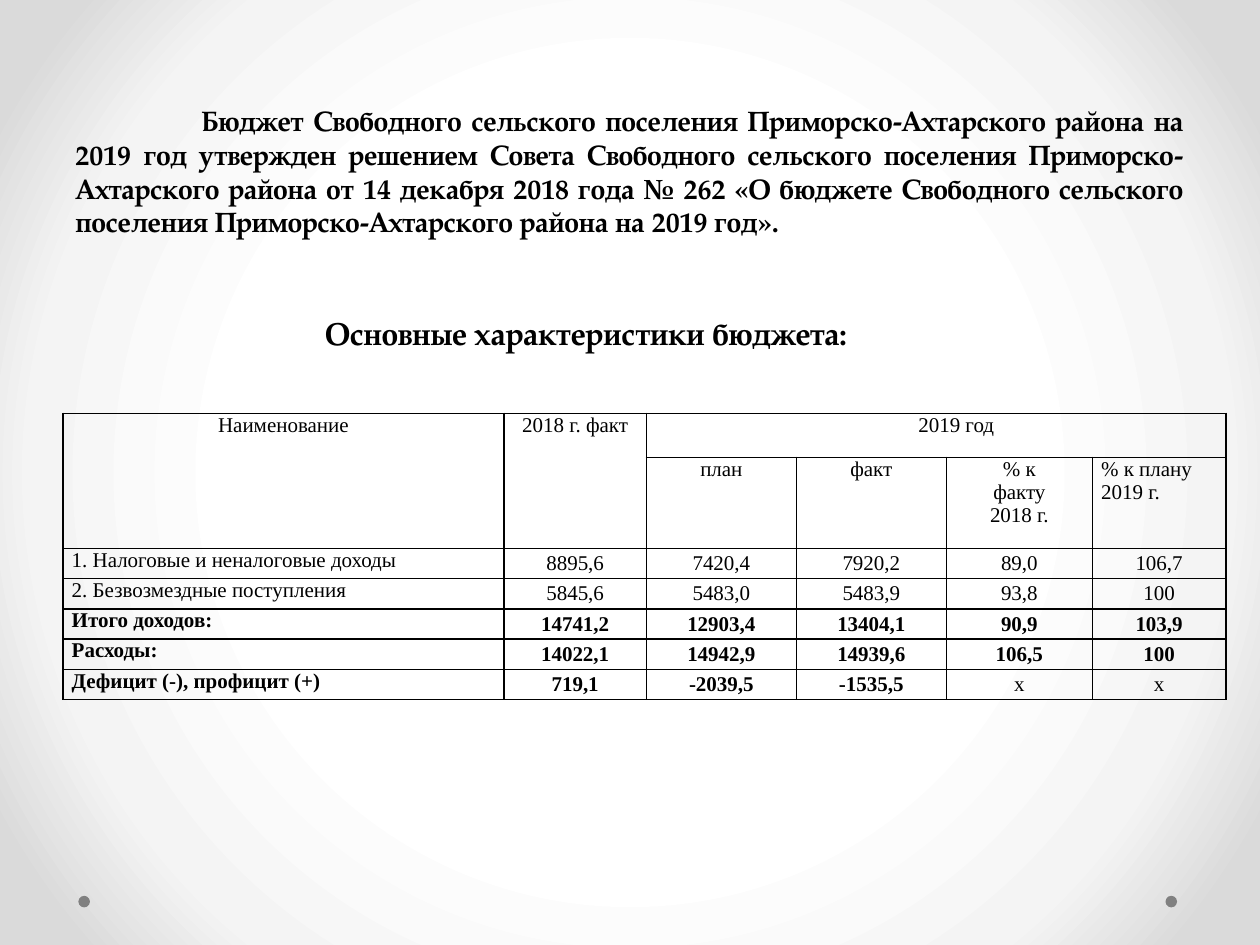
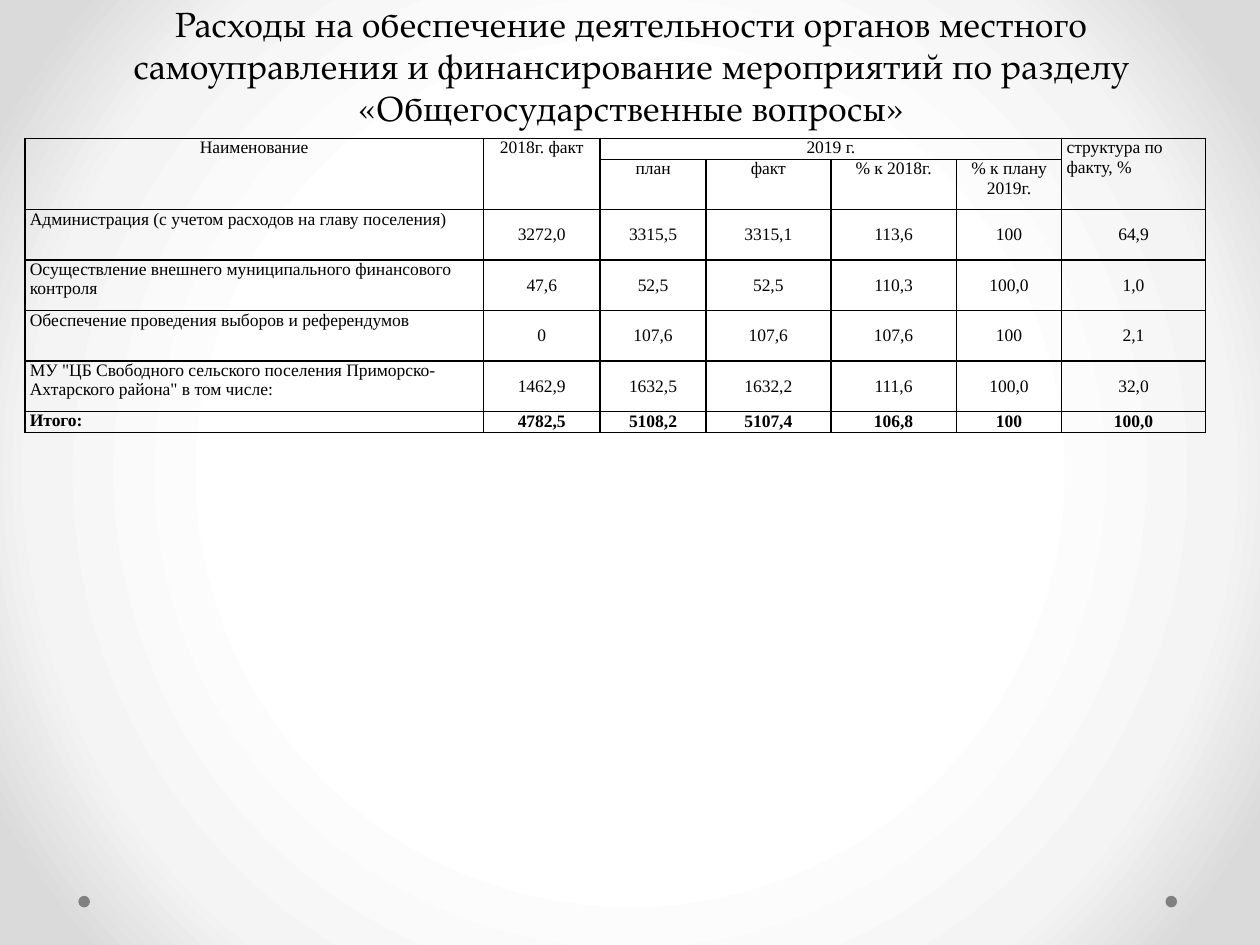
"""Builds two budget slides with shared background, dots, headings and table style."""
import dataclasses

import pptx
import pptx.dml.color
import pptx.enum.shapes
import pptx.enum.text
import pptx.oxml
import pptx.oxml.ns
import pptx.util

Pt = pptx.util.Pt
ALIGN = pptx.enum.text.PP_ALIGN
ANCHOR = pptx.enum.text.MSO_ANCHOR

BLACK = pptx.dml.color.RGBColor(0x00, 0x00, 0x00)
DOT_GREY = pptx.dml.color.RGBColor(0x80, 0x80, 0x80)
WHITE = pptx.dml.color.RGBColor(0xFF, 0xFF, 0xFF)
PALE_GREY = pptx.dml.color.RGBColor(0xF4, 0xF4, 0xF4)
EDGE_GREY = pptx.dml.color.RGBColor(0xDA, 0xDA, 0xDA)
GRADIENT_STOPS = ((50, WHITE), (76, PALE_GREY), (92, EDGE_GREY))

TITLE_FONT = "TeX Gyre Pagella"
TABLE_FONT = "Times New Roman"
SLIDE_WIDTH, SLIDE_HEIGHT = 720, 540
DOT_SIZE, DOT_TOP, DOT_LEFTS = 6.6, 511.9, (44.8, 666)
BORDER_SIDES = ("lnL", "lnR", "lnT", "lnB")
HEADER_ROWS = 2
NO_VALUE = "х"


@dataclasses.dataclass
class BudgetTable:
    """Content and measures of one table; the first two rows are its header."""
    left: float
    top: float
    column_widths: list
    row_heights: list
    font_size: float
    side_margin: float
    first_bold_row: int
    left_aligned_header: tuple
    merged_ranges: list
    rows: list


CHARACTERISTICS = BudgetTable(
    left=36, top=236.2,
    column_widths=[252, 81.4, 85.7, 85.7, 83.5, 76.3],
    row_heights=[25.2, 52] + [17.3] * 5,
    font_size=12, side_margin=5, first_bold_row=4,
    left_aligned_header=(1, 5),
    merged_ranges=[((0, 0), (1, 0)), ((0, 1), (1, 1)), ((0, 2), (0, 5))],
    rows=[
        ["Наименование", "2018 г. факт", "2019 год", "", "", ""],
        ["", "", "план", "факт", "% к\nфакту\n2018 г.", "% к плану\n2019 г."],
        ["1. Налоговые и неналоговые доходы", "8895,6", "7420,4", "7920,2", "89,0", "106,7"],
        ["2. Безвозмездные поступления", "5845,6", "5483,0", "5483,9", "93,8", "100"],
        ["Итого доходов:", "14741,2", "12903,4", "13404,1", "90,9", "103,9"],
        ["Расходы:", "14022,1", "14942,9", "14939,6", "106,5", "100"],
        ["Дефицит (-), профицит (+)", "719,1", "-2039,5", "-1535,5", NO_VALUE, NO_VALUE],
    ])

EXPENSES = BudgetTable(
    left=14.2, top=79,
    column_widths=[262, 66.8, 60.4, 71.4, 71.8, 60.2, 82.2],
    row_heights=[10] + [28.8] * 5 + [10],
    font_size=10, side_margin=2.9, first_bold_row=6,
    left_aligned_header=(0, 6),
    merged_ranges=[((0, 0), (1, 0)), ((0, 1), (1, 1)), ((0, 2), (0, 5)), ((0, 6), (1, 6))],
    rows=[
        ["Наименование", "2018г. факт", "2019 г.", "", "", "", "структура по факту, %"],
        ["", "", "план", "факт", "% к 2018г.", "% к плану 2019г.", ""],
        ["Администрация (с учетом расходов на главу поселения)",
         "3272,0", "3315,5", "3315,1", "113,6", "100", "64,9"],
        ["Осуществление внешнего муниципального финансового контроля",
         "47,6", "52,5", "52,5", "110,3", "100,0", "1,0"],
        ["Обеспечение проведения выборов и референдумов",
         "0", "107,6", "107,6", "107,6", "100", "2,1"],
        ['МУ "ЦБ Свободного сельского поселения Приморско-Ахтарского района" в том числе:',
         "1462,9", "1632,5", "1632,2", "111,6", "100,0", "32,0"],
        ["Итого:", "4782,5", "5108,2", "5107,4", "106,8", "100", "100,0"],
    ])


def set_background(master):
    """Give the master a circular gradient from white to grey."""
    master.background.fill.gradient()
    gradient = master.element.xpath("./p:cSld/p:bg//a:gradFill")[0]
    stops = "".join(
        f'<a:gs pos="{percent * 1000}"><a:srgbClr val="{color}"/></a:gs>'
        for percent, color in GRADIENT_STOPS)
    circular_gradient = pptx.oxml.parse_xml(
        f'<a:gradFill {pptx.oxml.ns.nsdecls("a")} rotWithShape="1"><a:gsLst>{stops}</a:gsLst>'
        '<a:path path="circle"><a:fillToRect l="50000" t="50000" r="50000" b="50000"/>'
        '</a:path></a:gradFill>')
    gradient.getparent().replace(gradient, circular_gradient)


def add_footer_dots(slide):
    """Draw the two grey dots at the foot of a slide."""
    for left in DOT_LEFTS:
        dot = slide.shapes.add_shape(
            pptx.enum.shapes.MSO_SHAPE.OVAL, Pt(left), Pt(DOT_TOP), Pt(DOT_SIZE), Pt(DOT_SIZE))
        dot.shadow.inherit = False
        dot.fill.solid()
        dot.fill.fore_color.rgb = DOT_GREY
        dot.line.fill.background()


def format_paragraph(paragraph, font_name, size, alignment, bold):
    """Set the alignment and font of one paragraph."""
    paragraph.alignment = alignment
    for run in paragraph.runs:
        run.font.name = font_name
        run.font.size = Pt(size)
        run.font.bold = bold
        run.font.color.rgb = BLACK


def add_heading(slide, box, text, size, alignment, bold=False, anchor=ANCHOR.BOTTOM):
    """Add a one-paragraph heading in the given box and return its shape."""
    heading = slide.shapes.add_textbox(*map(Pt, box))
    text_frame = heading.text_frame
    text_frame.word_wrap = True
    text_frame.vertical_anchor = anchor
    text_frame.text = text
    format_paragraph(text_frame.paragraphs[0], TITLE_FONT, size, alignment, bold)
    return heading


def indent_first_line(shape, indent):
    """Indent the first line of a shape's first paragraph."""
    paragraph_properties = shape.element.xpath(".//a:pPr")[0]
    paragraph_properties.set("indent", str(Pt(indent)))


def add_cell_borders(cell):
    """Draw black one-point lines on all sides of a cell."""
    cell_properties = cell._tc.get_or_add_tcPr()
    for position, side in enumerate(BORDER_SIDES):
        border = pptx.oxml.parse_xml(
            f'<a:{side} {pptx.oxml.ns.nsdecls("a")} w="{Pt(1)}"><a:solidFill>'
            f'<a:srgbClr val="{BLACK}"/></a:solidFill></a:{side}>')
        cell_properties.insert(position, border)


def fill_cell(cell, content, row_index, column_index):
    """Write and format one cell by its place: header, row label or value."""
    value = content.rows[row_index][column_index]
    is_header = row_index < HEADER_ROWS
    is_label = column_index == 0 and not is_header
    is_left = is_label or (row_index, column_index) == content.left_aligned_header
    is_bold = row_index >= content.first_bold_row and value != NO_VALUE

    cell.text_frame.text = value
    cell.fill.background()
    cell.margin_left = cell.margin_right = Pt(content.side_margin)
    cell.margin_top = cell.margin_bottom = Pt(0)
    cell.vertical_anchor = ANCHOR.TOP if is_header or is_label else ANCHOR.MIDDLE
    for paragraph in cell.text_frame.paragraphs:
        format_paragraph(paragraph, TABLE_FONT, content.font_size,
                         ALIGN.LEFT if is_left else ALIGN.CENTER, is_bold)
    add_cell_borders(cell)


def add_budget_table(slide, content):
    """Add a bordered table with merged header cells and return it."""
    box = (content.left, content.top, sum(content.column_widths), sum(content.row_heights))
    table = slide.shapes.add_table(
        len(content.row_heights), len(content.column_widths), *map(Pt, box)).table
    table.first_row = False
    table.horz_banding = False
    for column, width in zip(table.columns, content.column_widths):
        column.width = Pt(width)
    for row_index, (row, height) in enumerate(zip(table.rows, content.row_heights)):
        row.height = Pt(height)
        for column_index, cell in enumerate(row.cells):
            fill_cell(cell, content, row_index, column_index)
    for first, last in content.merged_ranges:
        table.cell(*first).merge(table.cell(*last))
    return table


def build_characteristics_slide(slide):
    """Build the slide with the main figures of the budget."""
    add_footer_dots(slide)
    decision = add_heading(
        slide, (36, 0, 648, 139.7),
        "Бюджет Свободного сельского поселения Приморско-Ахтарского района на 2019 год "
        "утвержден решением Совета Свободного сельского поселения Приморско-Ахтарского "
        "района от 14 декабря 2018 года № 262 «О бюджете Свободного сельского поселения "
        "Приморско-Ахтарского района на 2019 год».",
        16, ALIGN.JUSTIFY, bold=True)
    indent_first_line(decision, 72)
    add_heading(slide, (178.6, 175.7, 352, 28.8), "Основные характеристики бюджета:",
                18, ALIGN.LEFT, bold=True, anchor=ANCHOR.TOP)
    table = add_budget_table(slide, CHARACTERISTICS)
    year_cell = table.cell(0, 2)
    year_cell.margin_left = Pt(28)


def build_expenses_slide(slide):
    """Build the slide with spending on general state matters."""
    add_footer_dots(slide)
    add_heading(
        slide, (36.7, 0.7, 648, 76.3),
        "Расходы на обеспечение деятельности органов местного самоуправления и "
        "финансирование мероприятий по разделу «Общегосударственные вопросы»",
        20, ALIGN.CENTER)
    add_budget_table(slide, EXPENSES)


def main():
    """Create the presentation and save it."""
    presentation = pptx.Presentation()
    presentation.slide_width = Pt(SLIDE_WIDTH)
    presentation.slide_height = Pt(SLIDE_HEIGHT)
    set_background(presentation.slide_master)
    blank_layout = presentation.slide_layouts[6]
    for build_slide in (build_characteristics_slide, build_expenses_slide):
        build_slide(presentation.slides.add_slide(blank_layout))
    presentation.save("out.pptx")


if __name__ == "__main__":
    main()
